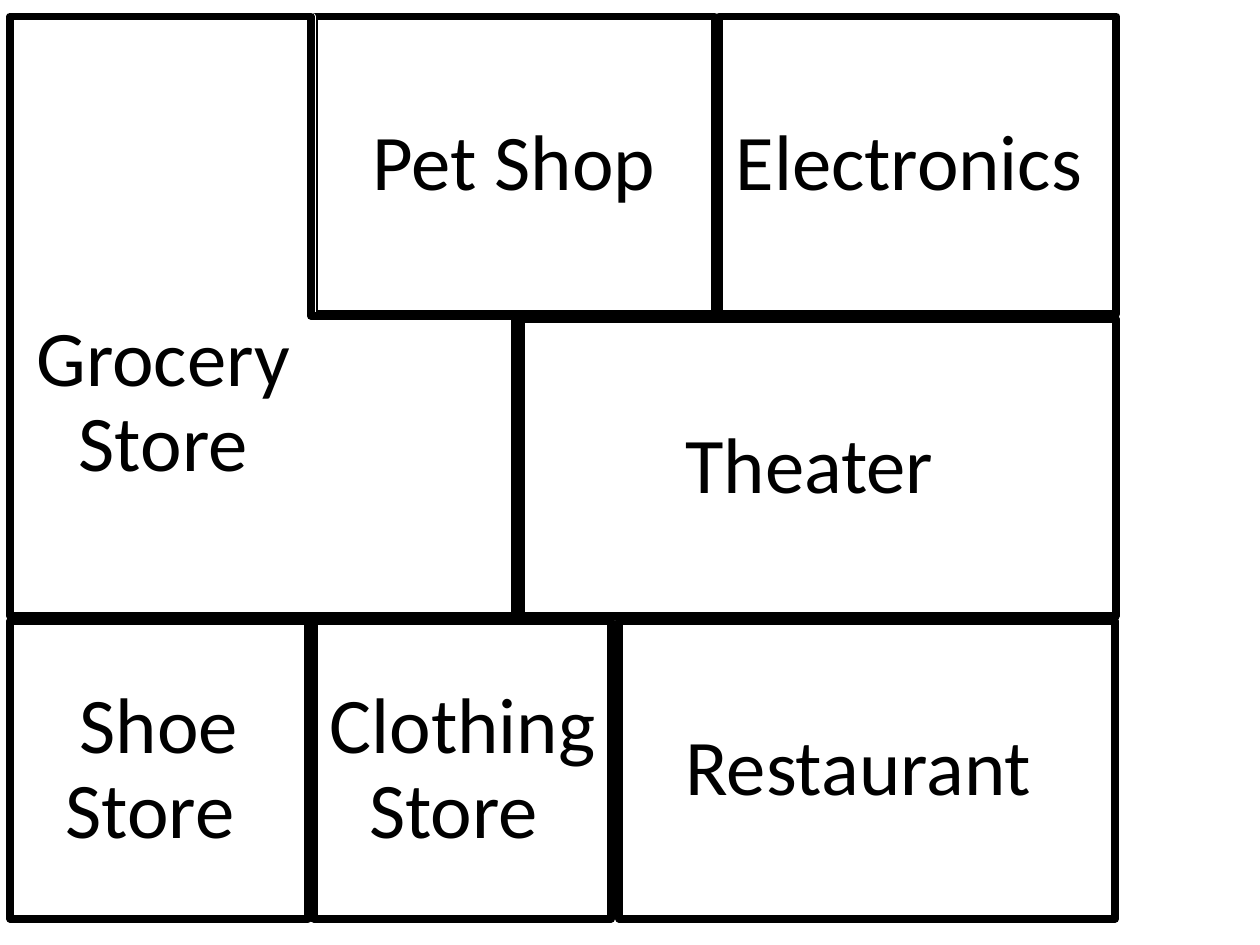
"""Build a one-slide floor plan of a shopping mall."""
from dataclasses import dataclass

from pptx import Presentation
from pptx import util as u
from pptx.dml.color import RGBColor
from pptx.enum import shapes, text


@dataclass(frozen=True)
class Theme:
    ink: RGBColor = RGBColor(0, 0, 0)
    paper: RGBColor = RGBColor(255, 255, 255)
    font: str = "Calibri"
    label_size: float = 45
    wall_width: float = 4.5


class FloorPlan:
    def __init__(self, slide, theme):
        self.slide = slide
        self.theme = theme

    def outline(self, kind, left, top, width, height, wall):
        shape = self.slide.shapes.add_shape(
            kind, u.Pt(left), u.Pt(top), u.Pt(width), u.Pt(height))
        shape.shadow.inherit = False
        shape.fill.background()
        shape.line.color.rgb = wall
        shape.line.width = u.Pt(self.theme.wall_width)
        return shape

    def room(self, label, left, top, width, height, wall=None, lowered=0):
        shape = self.outline(shapes.MSO_SHAPE.RECTANGLE, left, top, width,
                             height, wall or self.theme.ink)
        shape.fill.solid()
        shape.fill.fore_color.rgb = self.theme.paper
        frame = shape.text_frame
        frame.word_wrap = True
        frame.vertical_anchor = text.MSO_ANCHOR.MIDDLE
        frame.margin_top = u.Pt(3.6 + lowered)
        frame.text = label
        paragraph = frame.paragraphs[0]
        paragraph.alignment = text.PP_ALIGN.CENTER
        paragraph.line_spacing = 0.9
        font = paragraph.runs[0].font
        font.name = self.theme.font
        font.size = u.Pt(self.theme.label_size)
        font.color.rgb = self.theme.ink

    def corner(self, left, top, width, height, arm):
        shape = self.outline(shapes.MSO_SHAPE.CORNER, left, top, width,
                             height, self.theme.ink)
        shape.adjustments[0] = arm
        shape.adjustments[1] = arm


def main():
    presentation = Presentation()
    presentation.slide_width = u.Pt(720)
    presentation.slide_height = u.Pt(540)
    slide = presentation.slides.add_slide(presentation.slide_layouts[6])
    theme = Theme()
    plan = FloorPlan(slide, theme)

    depth = 170
    row_top = [9.4 + 172.8 * row for row in range(3)]
    two_rows = row_top[1] + depth - row_top[0]
    rooms = [
        ("Clothing Store ", 2, 179.3, 170),
        ("Electronics ", 0, 411.1, 226.8),
        ("Pet Shop", 0, 179.3, 229),
        ("Theater ", 1, 297.6, 340),
        ("Restaurant ", 2, 353.8, 283.5),
        ("Shoe Store ", 2, 5.8, 170),
    ]
    for label, row, left, width in rooms:
        plan.room(label, left, row_top[row], width, depth)
    plan.room("Grocery Store", 8.3, row_top[0], 170, two_rows,
              wall=theme.paper, lowered=99)
    plan.corner(5.8, row_top[0], 288.7, two_rows, arm=0.595)

    presentation.save("out.pptx")


if __name__ == "__main__":
    main()
